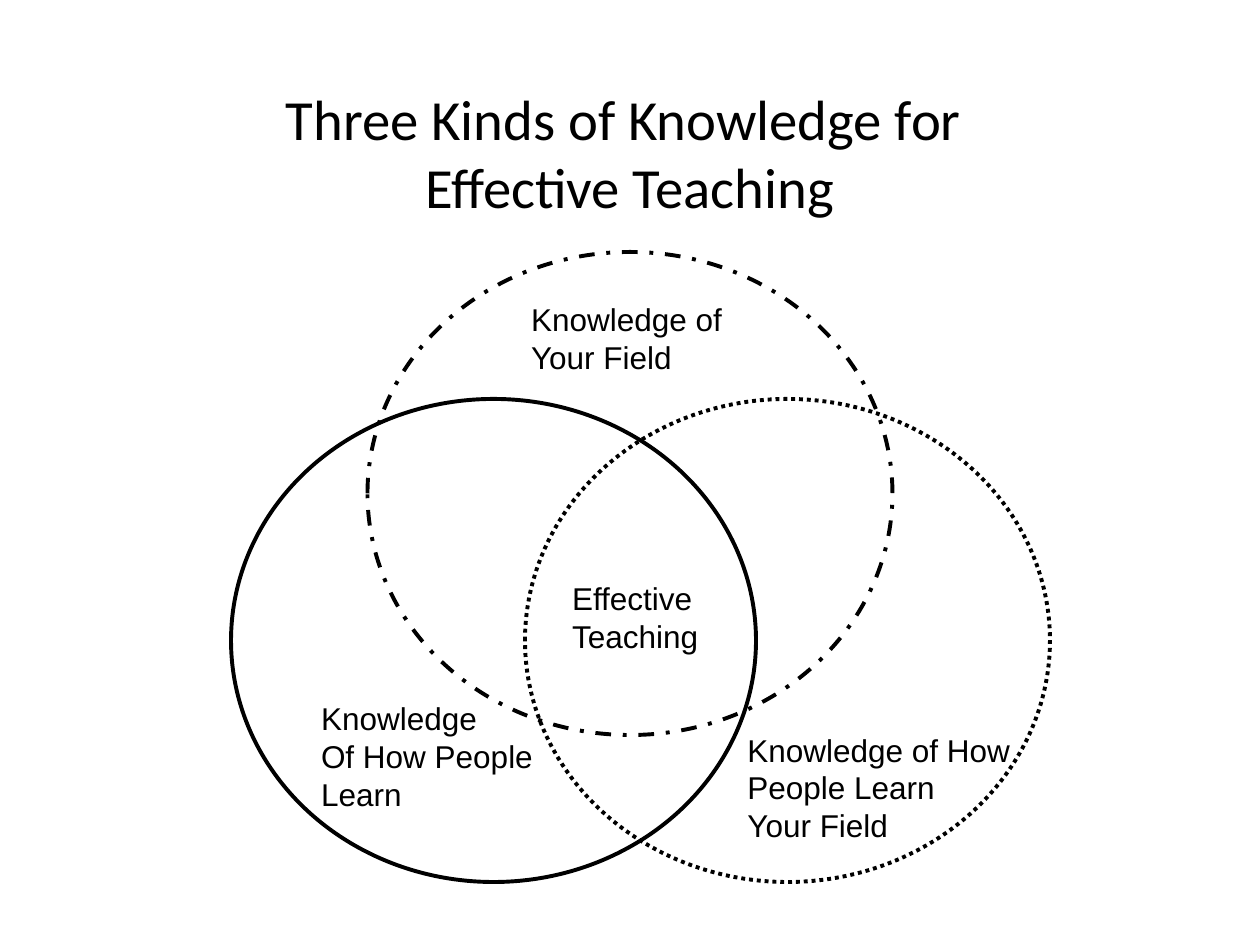
from typing import NamedTuple

from pptx import Presentation
from pptx.dml.color import RGBColor
from pptx.enum.dml import MSO_LINE
from pptx.enum.shapes import MSO_SHAPE
from pptx.enum.text import MSO_ANCHOR, MSO_AUTO_SIZE, PP_ALIGN
from pptx.slide import Slide
from pptx.text.text import TextFrame
from pptx.util import Inches, Pt

BLACK = RGBColor(0x00, 0x00, 0x00)
COLUMNS, ROWS = 120, 90
UNIT = Inches(10) // COLUMNS
CIRCLE_WIDTH, CIRCLE_HEIGHT = 50, 46


class Circle(NamedTuple):
    column: float
    row: float
    dash: MSO_LINE


class Label(NamedTuple):
    column: float
    row: float
    width: float
    height: float
    text: str


CIRCLES = [
    Circle(35, 24, MSO_LINE.DASH_DOT),
    Circle(22, 38, MSO_LINE.SOLID),
    Circle(50, 38, MSO_LINE.ROUND_DOT),
]

LABELS = [
    Label(53.3, 54.6, 14.8, 8.4, "Effective\nTeaching"),
    Label(49.4, 28, 20.6, 8.4, "Knowledge of\nYour Field"),
    Label(29.4, 66, 22.6, 12, "Knowledge\nOf How People\nLearn"),
    Label(70, 69, 28.2, 12, "Knowledge of How\nPeople Learn\nYour Field"),
]


def grid(*cells: float) -> list[int]:
    return [round(cell * UNIT) for cell in cells]


def format_text(frame: TextFrame, font: str, size: float, align: PP_ALIGN) -> None:
    for paragraph in frame.paragraphs:
        paragraph.alignment = align
        for span in paragraph.runs:
            span.font.name = font
            span.font.size = Pt(size)
            span.font.color.rgb = BLACK


def set_title(page: Slide, text: str) -> None:
    title = page.shapes.title
    title.left, title.top, title.width, title.height = grid(9, 7, 102, 15)
    frame = title.text_frame
    frame.text = text
    frame.vertical_anchor = MSO_ANCHOR.MIDDLE
    frame.auto_size = MSO_AUTO_SIZE.NONE
    format_text(frame, "Calibri", 32.4, PP_ALIGN.CENTER)


def draw_circle(page: Slide, circle: Circle) -> None:
    place = grid(circle.column, circle.row, CIRCLE_WIDTH, CIRCLE_HEIGHT)
    shape = page.shapes.add_shape(MSO_SHAPE.OVAL, *place)
    shape.shadow.inherit = False
    shape.fill.background()
    shape.line.color.rgb = BLACK
    shape.line.width = Pt(2.25)
    shape.line.dash_style = circle.dash


def draw_label(page: Slide, label: Label) -> None:
    place = grid(label.column, label.row, label.width, label.height)
    frame = page.shapes.add_textbox(*place).text_frame
    frame.text = label.text
    frame.word_wrap = False
    frame.auto_size = MSO_AUTO_SIZE.SHAPE_TO_FIT_TEXT
    format_text(frame, "Arial", 18, PP_ALIGN.LEFT)


def main() -> None:
    deck = Presentation()
    deck.slide_width, deck.slide_height = grid(COLUMNS, ROWS)
    page = deck.slides.add_slide(deck.slide_layouts[5])
    set_title(page, "Three Kinds of Knowledge for \vEffective Teaching")
    for circle in CIRCLES:
        draw_circle(page, circle)
    for label in LABELS:
        draw_label(page, label)
    deck.save("out.pptx")


if __name__ == "__main__":
    main()
